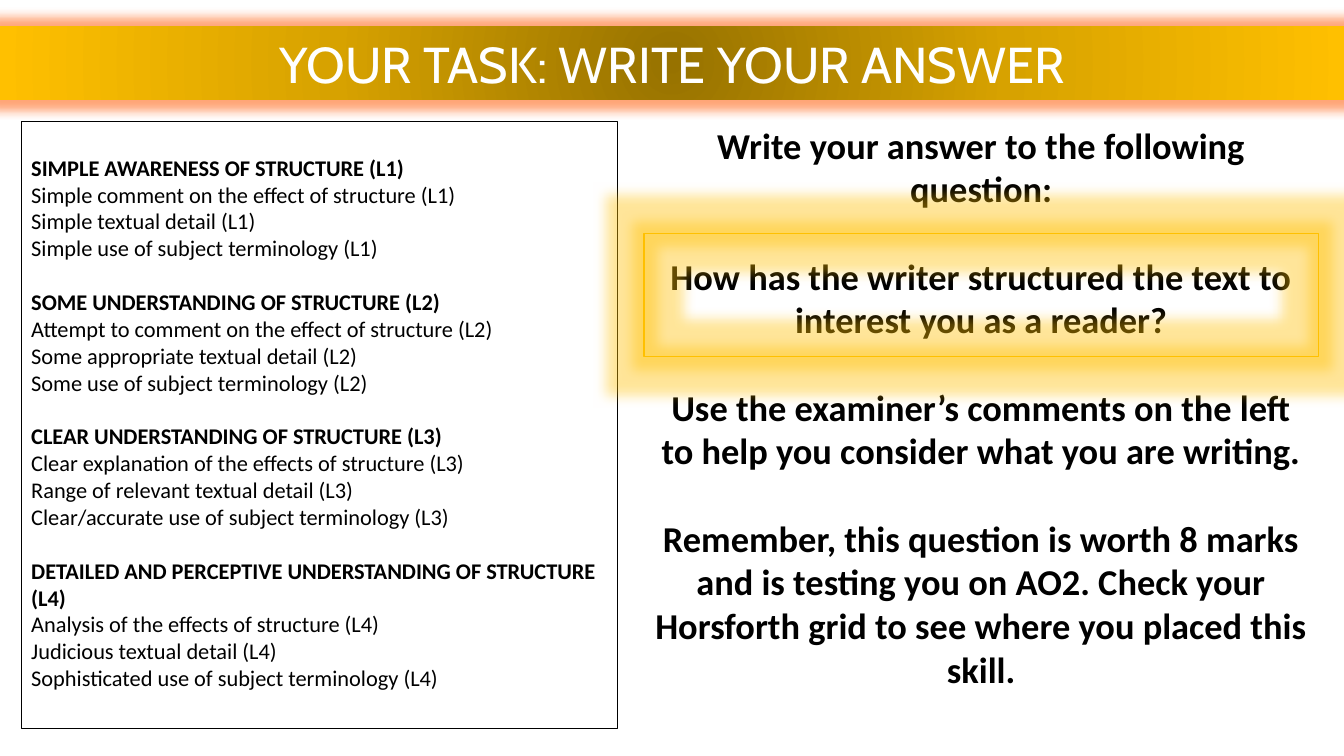
from lxml.etree import SubElement
from pptx import Presentation
from pptx.dml.color import RGBColor
from pptx.enum.shapes import MSO_SHAPE as Shape
from pptx.enum.text import MSO_ANCHOR as Anchor, MSO_AUTO_SIZE as AutoSize, PP_ALIGN as Align
from pptx.oxml.ns import qn
from pptx.util import Pt

BLACK = RGBColor(0x00, 0x00, 0x00)
WHITE = RGBColor(0xFF, 0xFF, 0xFF)
GOLD = RGBColor(0xFF, 0xC0, 0x00)
MID_GOLD = RGBColor(0xD7, 0xA2, 0x00)
DARK_GOLD = RGBColor(0x97, 0x72, 0x00)
ORANGE = RGBColor(0xFF, 0x6A, 0x1E)

LEVELS = [
    ("SIMPLE AWARENESS OF STRUCTURE (L1)", [
        "Simple comment on the effect of structure (L1)",
        "Simple textual detail (L1)",
        "Simple use of subject terminology (L1)"]),
    ("SOME UNDERSTANDING OF STRUCTURE (L2)", [
        "Attempt to comment on the effect of structure (L2)",
        "Some appropriate textual detail (L2)",
        "Some use of subject terminology (L2)"]),
    ("CLEAR UNDERSTANDING OF STRUCTURE (L3)", [
        "Clear explanation of the effects of structure (L3)",
        "Range of relevant textual detail (L3)",
        "Clear/accurate use of subject terminology (L3)"]),
    ("DETAILED AND PERCEPTIVE UNDERSTANDING OF STRUCTURE (L4)", [
        "Analysis of the effects of structure (L4)",
        "Judicious textual detail (L4)",
        "Sophisticated use of subject terminology (L4)"]),
]
INSTRUCTIONS = [
    "Write your answer to the following question:",
    "How has the writer structured the text to interest you as a reader?",
    "Use the examiner’s comments on the left to help you consider what you are writing.",
    "Remember, this question is worth 8 marks and is testing you on AO2. "
    "Check your Horsforth grid to see where you placed this skill.",
]


def place(shape, box):
    """Move a shape to box: left, top, width, height in points."""
    shape.left, shape.top, shape.width, shape.height = map(Pt, box)


def add_color(parent, color, opacity=100):
    element = SubElement(parent, qn("a:srgbClr"), val=str(color))
    if opacity < 100:
        SubElement(element, qn("a:alpha"), val=str(opacity * 1000))


def add_glow(shape, color, radius, opacity):
    shape.shadow.inherit = False
    effects = shape._element.spPr.find(qn("a:effectLst"))
    glow = SubElement(effects, qn("a:glow"), rad=str(Pt(radius)))
    add_color(glow, color, opacity)


def fill_radial(shape, colors):
    """Fill a shape with evenly spaced colours, from its centre outwards."""
    shape.fill.background()
    properties = shape._element.spPr
    gradient = properties.makeelement(qn("a:gradFill"), {"rotWithShape": "1"})
    properties.replace(properties.find(qn("a:noFill")), gradient)
    stops = SubElement(gradient, qn("a:gsLst"))
    for index, color in enumerate(colors):
        position = 100000 * index // (len(colors) - 1)
        add_color(SubElement(stops, qn("a:gs"), pos=str(position)), color)
    circle = SubElement(gradient, qn("a:path"), path="circle")
    SubElement(circle, qn("a:fillToRect"), dict.fromkeys("ltrb", "50000"))


def prepare_frame(shape, anchor, top_margin=3.6):
    frame = shape.text_frame
    frame.word_wrap = True
    frame.auto_size = AutoSize.NONE
    frame.vertical_anchor = anchor
    frame.margin_left = frame.margin_right = Pt(7.2)
    frame.margin_top, frame.margin_bottom = Pt(top_margin), Pt(3.6)
    return frame


def write_lines(frame, lines, size, alignment):
    """Write plain lines, each given as text, bold and space before it."""
    for index, (text, bold, gap) in enumerate(lines):
        paragraph = frame.paragraphs[0] if index == 0 else frame.add_paragraph()
        paragraph.text = text
        paragraph.alignment = alignment
        properties = paragraph._p.get_or_add_pPr()
        properties.set("marL", "0")
        properties.set("indent", "0")
        SubElement(properties, qn("a:buNone"))
        paragraph.space_before = Pt(gap)
        font = paragraph.font
        font.name, font.size, font.bold = "Calibri", Pt(size), bold
        font.color.rgb = BLACK


def build_banner(title, box):
    place(title, box)
    fill_radial(title, [DARK_GOLD, MID_GOLD, GOLD])
    title.line.fill.background()
    add_glow(title, ORANGE, 14, 60)
    paragraph = prepare_frame(title, Anchor.MIDDLE).paragraphs[0]
    paragraph.text = "YOUR TASK: WRITE YOUR ANSWER"
    paragraph.alignment = Align.CENTER
    font = paragraph.font
    font.name, font.size, font.color.rgb = "Cabin", Pt(36), WHITE


def build_levels(body, box):
    place(body, box)
    body.line.color.rgb, body.line.width = BLACK, Pt(0.75)
    line_height = 19.2
    lines = []
    for heading, criteria in LEVELS:
        lines.append((heading, True, line_height if lines else 0))
        lines += [(criterion, False, 0) for criterion in criteria]
    frame = prepare_frame(body, Anchor.TOP, 3.6 + line_height)
    write_lines(frame, lines, 16, Align.LEFT)


def build_instructions(slide, body, box):
    place(body, box)
    lines = [(text, True, 31.2 if index else 0) for index, text in enumerate(INSTRUCTIONS)]
    write_lines(prepare_frame(body, Anchor.TOP), lines, 26, Align.CENTER)

    left, top, width, _ = box
    question_frame = slide.shapes.add_shape(
        Shape.RECTANGLE, Pt(left), Pt(top + 82.8), Pt(width), Pt(87.8))
    question_frame.fill.background()
    question_frame.line.color.rgb, question_frame.line.width = GOLD, Pt(1)
    add_glow(question_frame, GOLD, 18, 40)


def main():
    presentation = Presentation()
    presentation.slide_width, presentation.slide_height = Pt(960), Pt(540)
    two_content = presentation.slide_layouts[3]
    slide = presentation.slides.add_slide(two_content)
    title, levels, instructions = slide.placeholders
    build_banner(title, (0, 18.7, 960, 52.6))
    build_levels(levels, (15.1, 87.1, 426.2, 433.4))
    build_instructions(slide, instructions, (460.1, 84.2, 481.7, 436.3))
    presentation.save("out.pptx")


if __name__ == "__main__":
    main()
